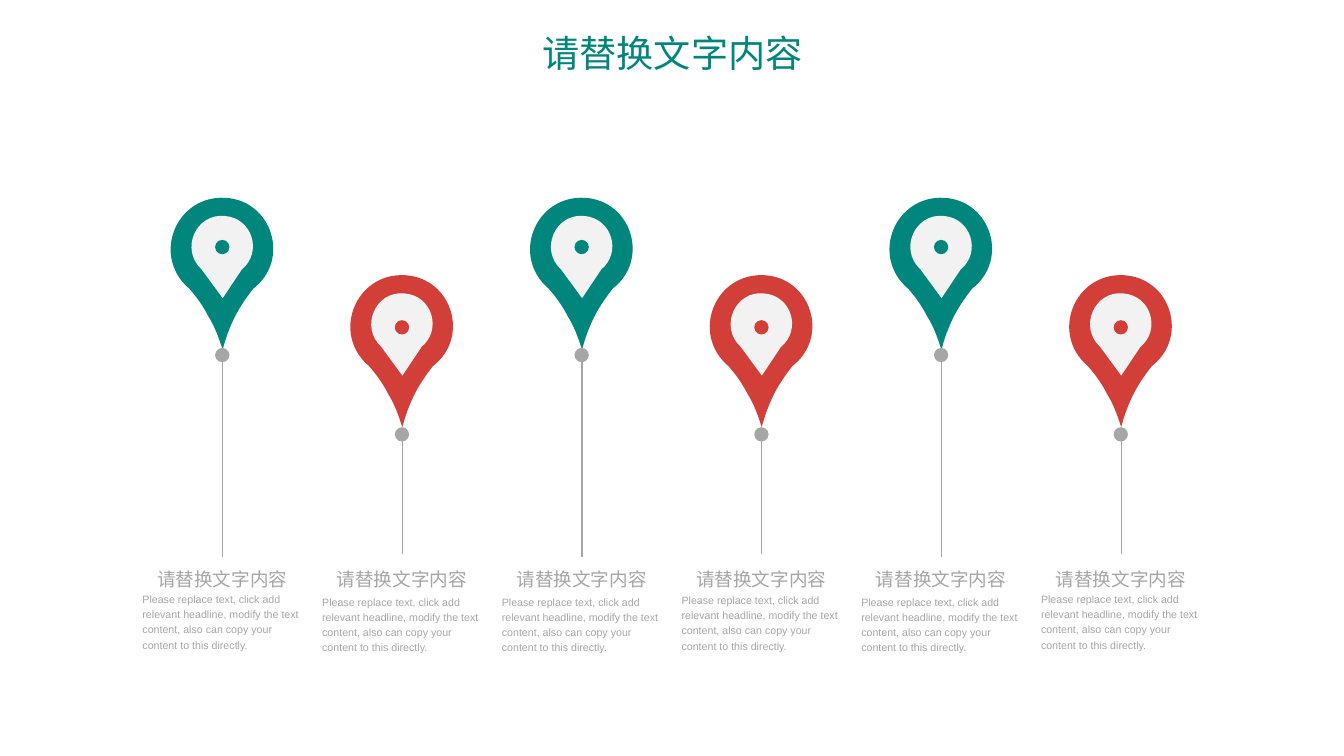
from dataclasses import dataclass

from lxml import etree
from pptx import Presentation
from pptx.dml.color import RGBColor
from pptx.enum.shapes import MSO_CONNECTOR, MSO_SHAPE
from pptx.enum.text import MSO_ANCHOR, MSO_AUTO_SIZE, PP_ALIGN
from pptx.oxml.ns import qn
from pptx.util import Pt

OVAL = MSO_SHAPE.OVAL
STRAIGHT = MSO_CONNECTOR.STRAIGHT
MIDDLE = MSO_ANCHOR.MIDDLE
GROW = MSO_AUTO_SIZE.SHAPE_TO_FIT_TEXT
LEFT, CENTER = PP_ALIGN.LEFT, PP_ALIGN.CENTER

PX = 9144  # 100 px to the inch


@dataclass(frozen=True)
class Theme:
    teal: str = "00867D"
    red: str = "D23E38"
    grey: str = "A6A6A6"
    pale: str = "F2F2F2"
    title: int = 28
    head: int = 14
    body: int = 8
    cjk: str = "Noto Sans CJK SC"
    latin: str = "Arial"


@dataclass(frozen=True)
class Tier:
    """Colour and heights of one row of pins."""
    color: str
    top: int
    hole: int
    dot: int
    stem: int
    foot: int


@dataclass(frozen=True)
class Drop:
    """Box corners, start and cubic curves, from the pin's top centre."""
    box: tuple
    start: tuple
    curves: tuple


THEME = Theme()
TIERS = [
    Tier(THEME.teal, 207, 251, 364, 369, 583),
    Tier(THEME.red, 288, 335, 447, 461, 580),
]

FIRST, PITCH = 233, 188
DOT = 15
BODY_TOPS = [618, 621, 621, 619, 621, 618]
HEAD = "请替换文字内容"
BODY = ("Please replace text, click add relevant headline, modify the text "
        "content, also can copy your content to this directly.")

PIN = Drop((-54, 0, 53, 160), (-35, 95), (
    ((-75, 61), (-49, -3), (3, 0)),
    ((52, 3), (71, 65), (32, 95)),
    ((25, 104), (18, 114), (13, 124)),
    ((7, 136), (3, 147), (0, 159)),
    ((-4, 147), (-8, 135), (-15, 124)),
    ((-20, 114), (-27, 104), (-35, 95)),
))
CORE = Drop((-33, 19, 31, 105), (20, 75), (
    ((42, 57), (31, 21), (2, 19)),
    ((-28, 16), (-45, 54), (-22, 75)),
    ((-22, 75), (0, 105), (0, 105)),
))


def paint(shape, color):
    shape.shadow.inherit = False
    shape.fill.solid()
    shape.fill.fore_color.rgb = RGBColor.from_string(color)
    shape.line.fill.background()


def add_drop(slide, drop, x, y, color):
    """Lay out the box as a freeform, then curve its outline."""
    left, top, right, bottom = drop.box
    build = slide.shapes.build_freeform(x + left, y + top, scale=PX)
    build.add_line_segments([(x + right, y + top), (x + right, y + bottom),
                             (x + left, y + bottom)], close=True)
    shape = build.convert_to_shape()
    paint(shape, color)
    outline = next(shape._element.iter(qn("a:path")))
    for child in list(outline):
        outline.remove(child)
    moves = [("a:moveTo", [drop.start])]
    moves += [("a:cubicBezTo", curve) for curve in drop.curves]
    for tag, points in moves:
        move = etree.SubElement(outline, qn(tag))
        for px, py in points:
            point = etree.SubElement(move, qn("a:pt"))
            point.set("x", str(px - left))
            point.set("y", str(py - top))
    etree.SubElement(outline, qn("a:close"))


def add_dot(slide, x, y, color):
    left = x - DOT // 2 - 1
    paint(slide.shapes.add_shape(OVAL, left * PX, y * PX, DOT * PX, DOT * PX), color)


def add_stem(slide, x, foot, top):
    line = slide.shapes.add_connector(STRAIGHT, x * PX, foot * PX, x * PX, top * PX)
    line.line.color.rgb = RGBColor.from_string(THEME.grey)
    line.line.width = Pt(1)
    etree.SubElement(line._element.spPr, qn("a:effectLst"))


def add_text(slide, text, box, size, color, font, align=CENTER, wrap=True, inset=0):
    shape = slide.shapes.add_textbox(*(n * PX for n in box))
    frame = shape.text_frame
    frame.text = text
    frame.word_wrap = wrap
    frame.auto_size = GROW
    frame.vertical_anchor = MIDDLE
    frame.margin_left = frame.margin_right = inset * PX
    frame.margin_top = frame.margin_bottom = inset * PX // 2
    para = frame.paragraphs[0]
    para.alignment = align
    para.line_spacing = 1.2
    run = para.runs[0]
    run.font.size = Pt(size)
    run.font.name = font
    run.font.color.rgb = RGBColor.from_string(color)
    east = etree.SubElement(run.font._element, qn("a:ea"))
    east.set("typeface", font)


def add_pin(slide, x, tier):
    add_stem(slide, x, tier.foot, tier.stem)
    add_drop(slide, PIN, x, tier.top, tier.color)
    add_drop(slide, CORE, x, tier.top, THEME.pale)
    add_dot(slide, x, tier.dot, THEME.grey)
    add_dot(slide, x, tier.hole, tier.color)


def add_label(slide, x, top):
    add_text(slide, HEAD, (x - 69, 591, 137, 26), THEME.head, THEME.grey,
             THEME.latin, wrap=False)
    add_text(slide, BODY, (x - 84, top, 168, 63), THEME.body, THEME.grey,
             THEME.latin, align=LEFT)


def main():
    deck = Presentation()
    deck.slide_width, deck.slide_height = 1406 * PX, 791 * PX
    slide = deck.slides.add_slide(deck.slide_layouts[6])
    for i, top in enumerate(BODY_TOPS):
        x = FIRST + i * PITCH
        add_pin(slide, x, TIERS[i % len(TIERS)])
        add_label(slide, x, top)
    add_text(slide, HEAD, (531, 17, 345, 67), THEME.title, THEME.teal,
             THEME.cjk, inset=10)
    deck.save("out.pptx")


if __name__ == "__main__":
    main()
